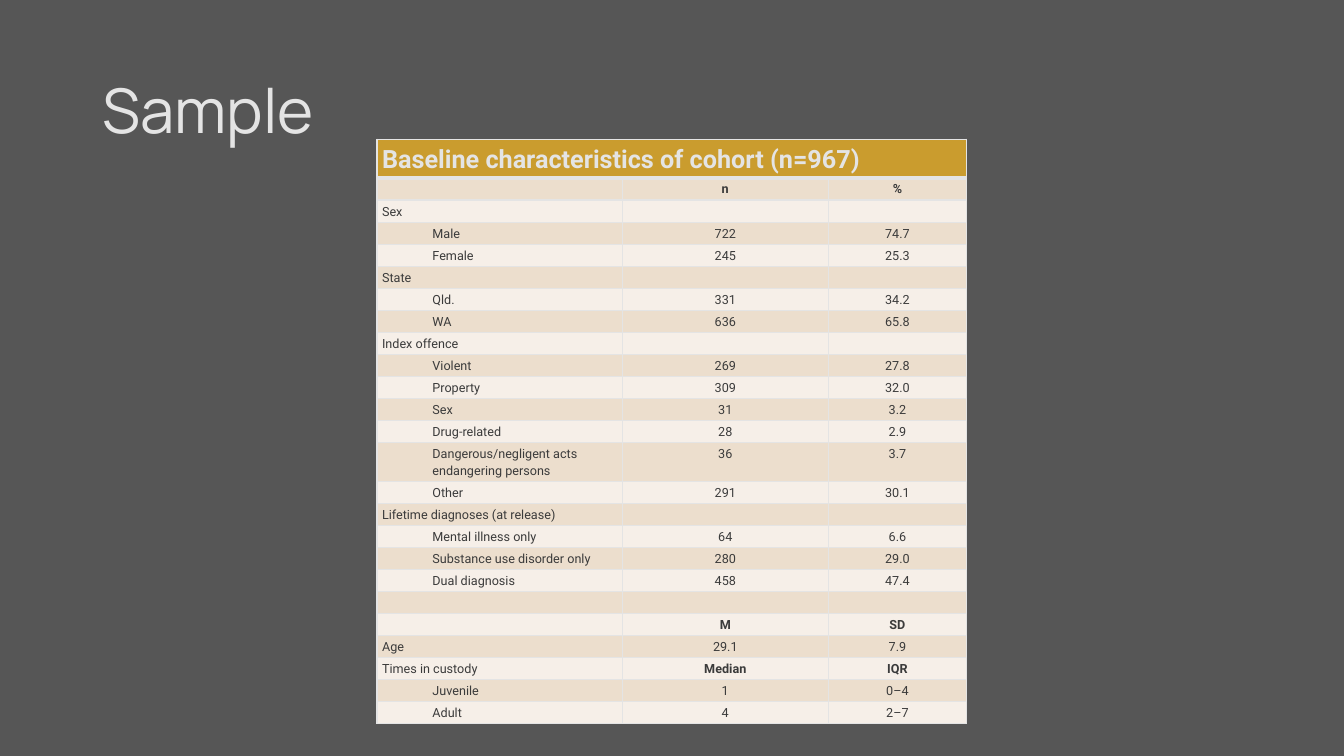
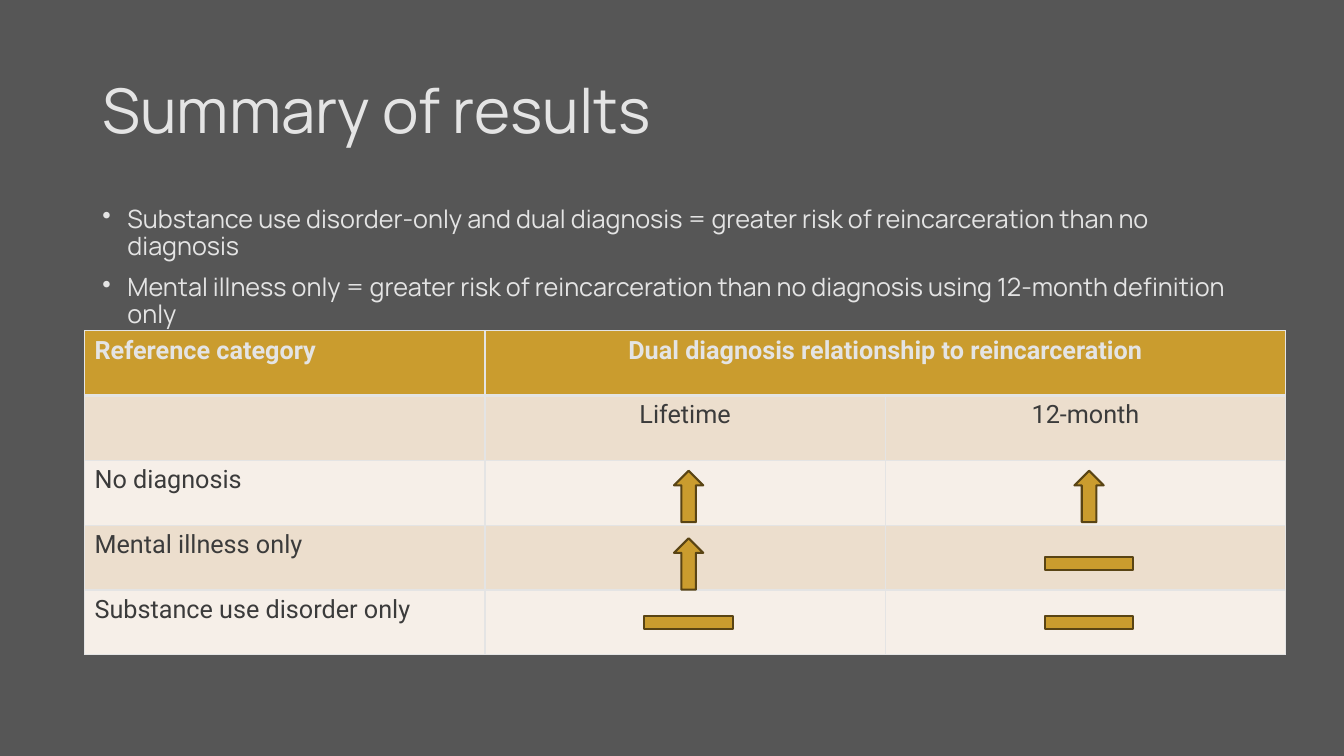
from lxml import etree
from pptx import Presentation
from pptx.dml.color import RGBColor
from pptx.enum.shapes import MSO_SHAPE
from pptx.enum.text import MSO_ANCHOR, MSO_AUTO_SIZE, PP_ALIGN
from pptx.oxml.ns import qn
from pptx.util import Pt

BACKGROUND = RGBColor(0x56, 0x56, 0x56)
LIGHT = RGBColor(0xE4, 0xE4, 0xE4)
DARK = RGBColor(0x3B, 0x3B, 0x3B)
GOLD = RGBColor(0xCA, 0x9C, 0x2E)
BROWN = RGBColor(0x59, 0x44, 0x14)
BANDS = (RGBColor(0xF6, 0xEF, 0xE8), RGBColor(0xEC, 0xDE, 0xCD))
HEADING_FONT, TABLE_FONT = "Manrope", "Roboto"
LEFT, CENTER = PP_ALIGN.LEFT, PP_ALIGN.CENTER
MIDDLE, TOP = MSO_ANCHOR.MIDDLE, MSO_ANCHOR.TOP
NO_FIT = MSO_AUTO_SIZE.NONE
UP_ARROW, BAR = MSO_SHAPE.UP_ARROW, MSO_SHAPE.RECTANGLE
TITLE_ONLY = 5

# Content: (indent level, label, first value, second value)
COHORT_TITLE = "Baseline characteristics of cohort (n=967)"
COHORT = [
    (0, "", "n", "%"),
    (0, "Sex", "", ""),
    (1, "Male", "722", "74.7"),
    (1, "Female", "245", "25.3"),
    (0, "State", "", ""),
    (1, "Qld.", "331", "34.2"),
    (1, "WA", "636", "65.8"),
    (0, "Index offence", "", ""),
    (1, "Violent", "269", "27.8"),
    (1, "Property", "309", "32.0"),
    (1, "Sex", "31", "3.2"),
    (1, "Drug-related", "28", "2.9"),
    (1, "Dangerous/negligent acts endangering persons", "36", "3.7"),
    (1, "Other", "291", "30.1"),
    (0, "Lifetime diagnoses (at release)", "", ""),
    (1, "Mental illness only", "64", "6.6"),
    (1, "Substance use disorder only", "280", "29.0"),
    (1, "Dual diagnosis", "458", "47.4"),
    (0, "", "", ""),
    (0, "", "M", "SD"),
    (0, "Age", "29.1", "7.9"),
    (0, "Times in custody", "Median", "IQR"),
    (1, "Juvenile", "1", "0–4"),
    (1, "Adult", "4", "2–7"),
]
FINDINGS = [
    "Substance use disorder-only and dual diagnosis = greater risk of "
    "reincarceration than no diagnosis",
    "Mental illness only = greater risk of reincarceration than no diagnosis "
    "using 12-month definition only",
]
RESULTS = [
    ("Reference category", "Dual diagnosis relationship to reincarceration", ""),
    ("", "Lifetime", "12-month"),
    ("No diagnosis", "", ""),
    ("Mental illness only", "", ""),
    ("Substance use disorder only", "", ""),
]
# Marks in the results table: vertical centre, then one shape per column
MARKS = [
    (354.6, (UP_ARROW, UP_ARROW)),
    (402.8, (UP_ARROW, BAR)),
    (444.6, (BAR, BAR)),
]
MARK_SIZES = {UP_ARROW: (20.9, 36.7), BAR: (63.4, 9.4)}


def write(para, text, font=TABLE_FONT, size=18, color=DARK, bold=False,
          align=LEFT, spacing=None, before=0, after=0, indent=0, bullet=None):
    """Write one formatted paragraph."""
    para.alignment = align
    para.space_before, para.space_after = Pt(before), Pt(after)
    if spacing:
        para.line_spacing = spacing
    properties = para._p.get_or_add_pPr()
    if indent:
        properties.set("marL", str(Pt(indent)))
    if bullet:
        properties.set("indent", str(-Pt(indent)))
        etree.SubElement(properties, qn("a:buChar"), char=bullet)
    if not text:
        etree.SubElement(para._p, qn("a:endParaRPr"), sz=str(size * 100))
        return
    span = para.add_run()
    span.text = text
    span.font.name, span.font.size = font, Pt(size)
    span.font.bold, span.font.color.rgb = bold, color


def add_page(deck, title):
    page = deck.slides.add_slide(deck.slide_layouts[TITLE_ONLY])
    box = page.shapes.title
    box.left, box.top, box.width, box.height = Pt(66), Pt(28.8), Pt(828), Pt(104.4)
    frame = box.text_frame
    frame.auto_size, frame.vertical_anchor = NO_FIT, MIDDLE
    write(frame.paragraphs[0], title, font=HEADING_FONT, size=44, color=LIGHT,
          spacing=0.9)
    return page


def set_borders(cell, row):
    """Draw thin borders, with a thick one under the header row."""
    widths = {"L": 1, "R": 1, "T": 3 if row == 1 else 1, "B": 3 if row == 0 else 1}
    properties = cell._tc.get_or_add_tcPr()
    for side, width in widths.items():
        line = etree.SubElement(properties, qn(f"a:ln{side}"), w=str(Pt(width)))
        fill = etree.SubElement(line, qn("a:solidFill"))
        etree.SubElement(fill, qn("a:srgbClr"), val=str(LIGHT))


def add_grid(page, left, top, widths, heights, merge_from):
    """Add an empty banded table whose header merges from one column on."""
    frame = page.shapes.add_table(len(heights), len(widths), Pt(left), Pt(top),
                                  Pt(sum(widths)), Pt(sum(heights)))
    table = frame.table
    table.first_row = table.horz_banding = False
    for column, width in zip(table.columns, widths):
        column.width = Pt(width)
    for index, (row, height) in enumerate(zip(table.rows, heights)):
        row.height = Pt(height)
        for cell in row.cells:
            set_borders(cell, index)
            cell.fill.solid()
            cell.fill.fore_color.rgb = BANDS[index % 2] if index else GOLD
    table.cell(0, merge_from).merge(table.cell(0, len(widths) - 1))
    return table


def build_sample(deck):
    page = add_page(deck, "Sample")
    # Only the long label takes two lines
    heights = [27.8] + [27.8 if len(row[1]) > 40 else 15.75 for row in COHORT]
    table = add_grid(page, 269.3, 99.4, (175.2, 147.2, 98.8), heights, 0)
    for cell in table.iter_cells():
        cell.margin_left = cell.margin_right = Pt(3.6)
        cell.margin_top = cell.margin_bottom = Pt(1.44)
    shared = {"spacing": 1.15, "after": 8}
    write(table.cell(0, 0).text_frame.paragraphs[0], COHORT_TITLE, color=LIGHT,
          bold=True, **shared)
    for index, (level, *texts) in enumerate(COHORT, 1):
        for column, text in enumerate(texts):
            is_value = column > 0
            write(table.cell(index, column).text_frame.paragraphs[0], text, size=9,
                  bold=is_value and not text[:1].isdigit(),
                  align=CENTER if is_value else LEFT,
                  indent=0 if is_value else 36 * level, **shared)


def add_mark(page, kind, center_x, center_y):
    width, height = MARK_SIZES[kind]
    mark = page.shapes.add_shape(kind, Pt(center_x - width / 2),
                                 Pt(center_y - height / 2), Pt(width), Pt(height))
    mark.shadow.inherit = False
    mark.fill.solid()
    mark.fill.fore_color.rgb = GOLD
    mark.line.color.rgb, mark.line.width = BROWN, Pt(1.5)


def build_summary(deck):
    page = add_page(deck, "Summary of results")

    # Findings
    box = page.shapes.add_textbox(Pt(66), Pt(144), Pt(828), Pt(342.7))
    frame = box.text_frame
    frame.word_wrap, frame.auto_size, frame.vertical_anchor = True, NO_FIT, TOP
    for index, text in enumerate(FINDINGS):
        para = frame.add_paragraph() if index else frame.paragraphs[0]
        write(para, text, font=HEADING_FONT, color=LIGHT, spacing=0.9,
              before=10 if index else 0, indent=18, bullet="•")

    # Results table
    left, column_width = 60.4, 286
    table = add_grid(page, left, 236.2, [column_width] * 3,
                     [46.3] * len(RESULTS), 1)
    for index, texts in enumerate(RESULTS):
        for column, text in enumerate(texts):
            write(table.cell(index, column).text_frame.paragraphs[0], text,
                  color=DARK if index else LIGHT, bold=index == 0,
                  align=CENTER if column else LEFT)

    # Direction marks, just right of the column centres
    for center_y, kinds in MARKS:
        for column, kind in enumerate(kinds, 1):
            add_mark(page, kind, left + column_width * (column + 0.5) + 2.5, center_y)


def main():
    deck = Presentation()
    deck.slide_width, deck.slide_height = Pt(960), Pt(540)
    background = deck.slide_master.background.fill
    background.solid()
    background.fore_color.rgb = BACKGROUND
    build_sample(deck)
    build_summary(deck)
    deck.save("out.pptx")


if __name__ == "__main__":
    main()
